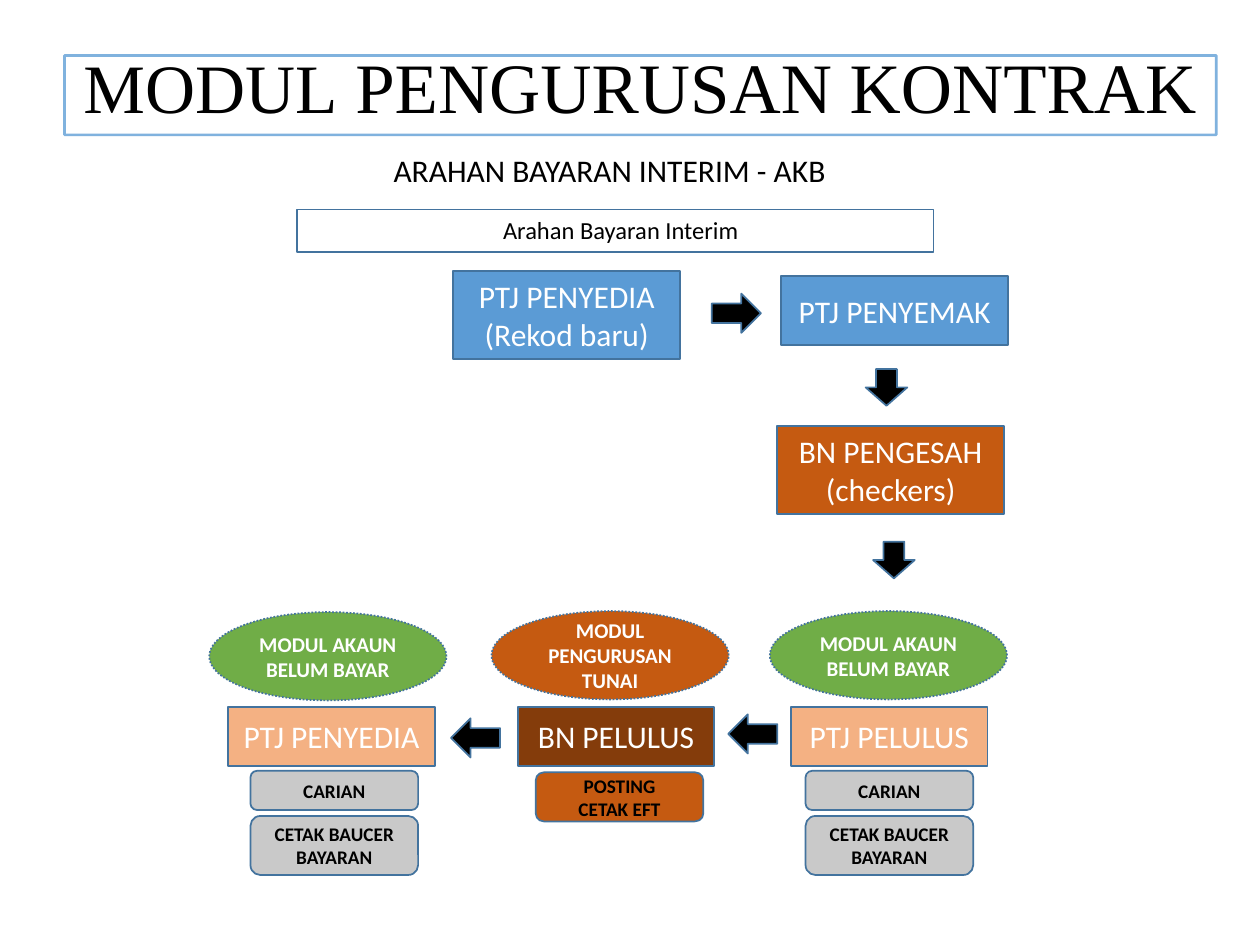
"""Build the interim payment instruction flow slide."""
from lxml.etree import SubElement
from pptx import Presentation
from pptx.dml.color import RGBColor
from pptx.enum.dml import MSO_LINE
from pptx.enum.shapes import MSO_SHAPE as Shape
from pptx.enum.text import MSO_ANCHOR as Anchor, PP_ALIGN as Align
from pptx.oxml.ns import qn
from pptx.util import Cm, Pt

BLACK = RGBColor(0x00, 0x00, 0x00)
WHITE = RGBColor(0xFF, 0xFF, 0xFF)
BLUE = RGBColor(0x5B, 0x9B, 0xD5)
EDGE = RGBColor(0x43, 0x73, 0x9E)
ORANGE = RGBColor(0xC5, 0x5A, 0x11)
PEACH = RGBColor(0xF4, 0xB1, 0x83)
BROWN = RGBColor(0x84, 0x3C, 0x0B)
GREEN = RGBColor(0x70, 0xAD, 0x47)
GREY = RGBColor(0xC9, 0xC9, 0xC9)


def add_shape(s, kind, box, fill=None, line=EDGE, width=1):
    sp = s.shapes.add_shape(kind, *map(Cm, box))
    sp.shadow.inherit = False
    if fill is None:
        sp.fill.background()
    else:
        sp.fill.solid()
        sp.fill.fore_color.rgb = fill
    sp.line.color.rgb = line
    sp.line.width = Pt(width)
    return sp


def write(sp, text, size, color=BLACK, bold=False, anchor=Anchor.MIDDLE):
    tf = sp.text_frame
    tf.text = text
    tf.word_wrap = True
    tf.vertical_anchor = anchor
    for p in tf.paragraphs:
        p.alignment = Align.CENTER
        for r in p.runs:
            r.font.name = "Calibri"
            r.font.size = Pt(size)
            r.font.bold = bold
            r.font.color.rgb = color


def add_title(s):
    sp = add_shape(s, Shape.RECTANGLE, (1.3, 1.12, 23.22, 1.6), line=BLUE, width=1.5)
    color = sp.line.fill.fore_color
    color.rgb = BLUE
    rgb = sp.element.spPr.find(qn("a:ln")).find(".//" + qn("a:srgbClr"))
    SubElement(rgb, qn("a:alpha"), val="76000")
    tf = sp.text_frame
    tf.word_wrap = True
    tf.vertical_anchor = Anchor.BOTTOM
    p = tf.paragraphs[0]
    p.alignment = Align.CENTER
    p.line_spacing = 0.9
    for text, size in (("MODUL", 39.6), (" PENGURUSAN KONTRAK", 40.5)):
        r = p.add_run()
        r.text = text
        r.font.name = "Times New Roman"
        r.font.size = Pt(size)
        r.font.color.rgb = BLACK


def add_headings(s):
    tb = s.shapes.add_textbox(Cm(2.08), Cm(2.92), Cm(20.42), Cm(1.02))
    write(tb, "ARAHAN BAYARAN INTERIM - AKB", 18, anchor=Anchor.TOP)
    sp = add_shape(s, Shape.RECTANGLE, (5.99, 4.22, 12.83, 0.86), width=0.75)
    write(sp, "Arahan Bayaran Interim", 14, anchor=Anchor.TOP)
    sp.text_frame.margin_left = Cm(0.47)


def add_step(s, text, box, fill):
    write(add_shape(s, Shape.RECTANGLE, box, fill), text, 18, WHITE)


def add_module(s, text, left, top, fill):
    sp = add_shape(s, Shape.OVAL, (left, top, 4.78, 1.78), fill)
    sp.line.dash_style = MSO_LINE.ROUND_DOT
    write(sp, text, 12, WHITE, bold=True)


def add_task(s, text, left, top, height, fill=GREY):
    sp = add_shape(s, Shape.ROUNDED_RECTANGLE, (left, top, 3.38, height), fill)
    write(sp, text, 11, bold=True)


def add_arrow(s, left, top, rotation, size=(0.99, 0.79)):
    sp = add_shape(s, Shape.RIGHT_ARROW, (left, top, *size), BLACK)
    sp.rotation = rotation


def main():
    prs = Presentation()
    prs.slide_width, prs.slide_height = Cm(25.4), Cm(19.05)
    s = prs.slides.add_slide(prs.slide_layouts[6])
    add_title(s)
    add_headings(s)

    for text, box, fill in (
        ("PTJ PENYEDIA\n(Rekod baru)", (9.14, 5.46, 4.57, 1.78), BLUE),
        ("PTJ PENYEMAK", (15.75, 5.56, 4.57, 1.4), BLUE),
        ("BN PENGESAH\n(checkers)", (15.67, 8.59, 4.57, 1.78), ORANGE),
        ("PTJ PELULUS", (15.95, 14.25, 3.96, 1.19), PEACH),
        ("BN PELULUS", (10.44, 14.25, 3.96, 1.19), BROWN),
        ("PTJ PENYEDIA", (4.6, 14.25, 4.17, 1.19), PEACH),
    ):
        add_step(s, text, box, fill)

    add_module(s, "MODUL PENGURUSAN TUNAI", 9.91, 12.32, ORANGE)
    add_task(s, "POSTING\nCETAK EFT", 10.8, 15.57, 0.99, ORANGE)
    for module_left, module_top, task_left in ((15.52, 12.32, 16.24), (4.22, 12.34, 5.05)):
        add_module(s, "MODUL AKAUN BELUM BAYAR", module_left, module_top, GREEN)
        add_task(s, "CARIAN", task_left, 15.54, 0.79)
        add_task(s, "CETAK BAUCER BAYARAN", task_left, 16.45, 1.19)

    add_arrow(s, 14.35, 5.92, 0)
    for left, top in ((17.5, 7.39), (17.65, 10.87)):
        add_arrow(s, left, top, 90, (0.74, 0.84))
    for left, top in ((14.68, 14.4), (9.09, 14.48)):
        add_arrow(s, left, top, 180)
    prs.save("out.pptx")


if __name__ == "__main__":
    main()
